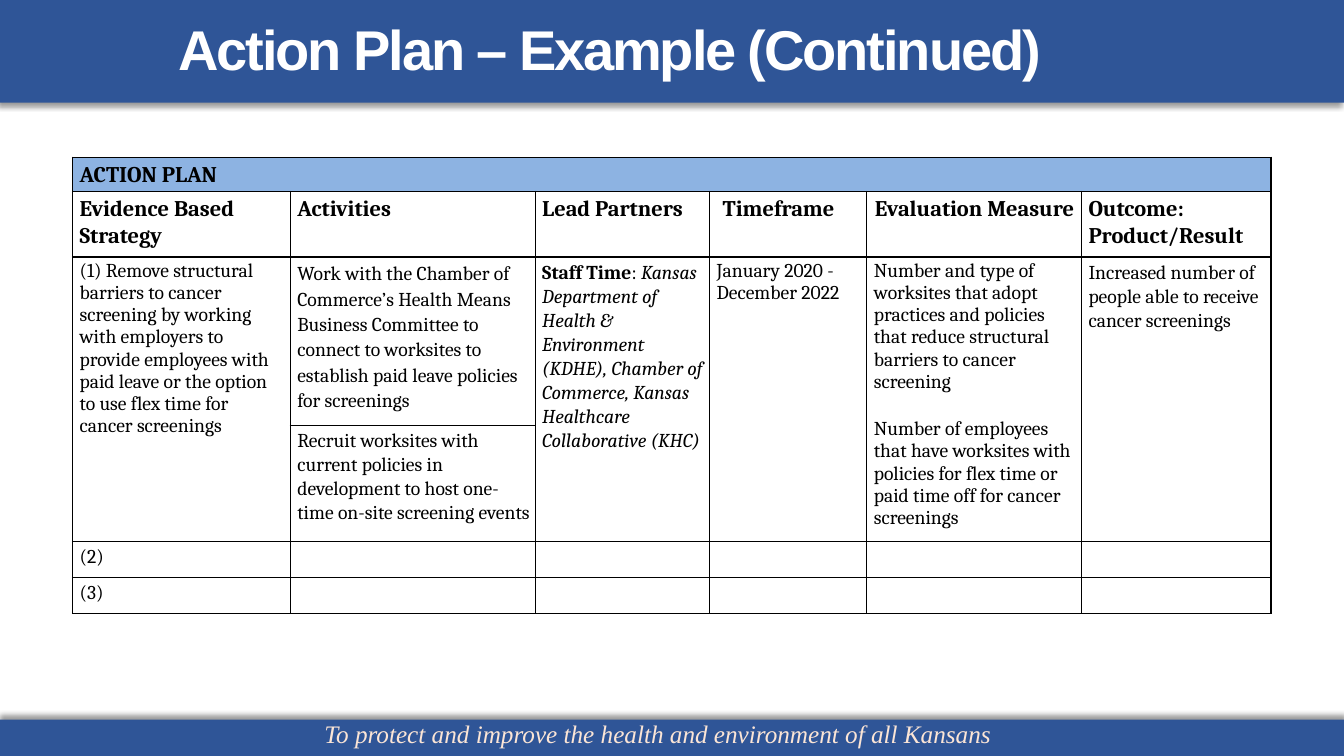
from lxml import etree
from pptx import Presentation
from pptx.dml.color import RGBColor
from pptx.enum.shapes import MSO_SHAPE
from pptx.enum.text import MSO_ANCHOR, MSO_AUTO_SIZE, PP_ALIGN
from pptx.oxml.ns import qn
from pptx.util import Inches, Pt

RECTANGLE = MSO_SHAPE.RECTANGLE
MIDDLE = MSO_ANCHOR.MIDDLE
NO_AUTOSIZE = MSO_AUTO_SIZE.NONE
LEFT = PP_ALIGN.LEFT

BLUE = RGBColor(0x2F, 0x55, 0x97)
LIGHT_BLUE = RGBColor(0x8D, 0xB3, 0xE2)
PEACH = RGBColor(0xFB, 0xE5, 0xD6)
WHITE = RGBColor(0xFF, 0xFF, 0xFF)
BLACK = RGBColor(0, 0, 0)

GRID_COLUMNS, GRID_ROWS = 160, 90
TITLE_FONT = {"name": "Arial", "size": Pt(40), "bold": True}
FOOTER_FONT = {"name": "Times New Roman", "size": Pt(18), "italic": True}
HEADING_FONT = {"name": "Cambria", "size": Pt(16), "bold": True}
BODY_FONT = {"name": "Cambria", "size": Pt(14), "bold": False}
CELL_MARGINS = {
    "margin_left": Inches(0.07),
    "margin_top": Inches(0.03),
    "margin_right": Inches(0.05),
    "margin_bottom": 0,
}
TITLE_MARGINS = dict.fromkeys(CELL_MARGINS, Inches(0.25))


def apply(target, values):
    for name, value in values.items():
        setattr(target, name, value)


class SlideBuilder:
    def __init__(self, presentation, layout):
        self.width = presentation.slide_width
        self.height = presentation.slide_height
        self.slide = presentation.slides.add_slide(layout)
        self.shapes = self.slide.shapes

    def across(self, columns):
        return round(self.width * columns / GRID_COLUMNS)

    def down(self, rows):
        return round(self.height * rows / GRID_ROWS)

    def box(self, left, top, width, height):
        return self.across(left), self.down(top), self.across(width), self.down(height)

    def fill_text(self, frame, paragraphs, font, color):
        for index, (runs, layout) in enumerate(paragraphs):
            paragraph = frame.add_paragraph() if index else frame.paragraphs[0]
            apply(paragraph, layout)
            for text, changes in runs:
                run = paragraph.add_run()
                run.text = text
                apply(run.font, {**font, **changes})
                run.font.color.rgb = color

    def bar(self, place, direction):
        shape = self.shapes.add_shape(RECTANGLE, *self.box(*place))
        shape.fill.solid()
        shape.fill.fore_color.rgb = BLUE
        shape.line.fill.background()
        shape.shadow.inherit = False
        effects = shape._element.spPr.find(qn("a:effectLst"))
        shadow = etree.SubElement(
            effects, qn("a:outerShdw"), blurRad=str(Pt(4)), dist=str(Pt(3)),
            dir=str(direction * 60000), algn="ctr", rotWithShape="0")
        color = etree.SubElement(shadow, qn("a:srgbClr"), val=str(BLACK))
        etree.SubElement(color, qn("a:alpha"), val="40000")

    def title(self, place, text):
        shape = self.shapes.title
        apply(shape, dict(zip(("left", "top", "width", "height"), self.box(*place))))
        frame = shape.text_frame
        apply(frame, {**TITLE_MARGINS, "vertical_anchor": MIDDLE,
                      "auto_size": NO_AUTOSIZE, "word_wrap": True})
        layout = {"alignment": LEFT, "line_spacing": 0.85}
        self.fill_text(frame, [([(text, {})], layout)], TITLE_FONT, WHITE)
        frame.paragraphs[0].runs[0]._r.get_or_add_rPr().set("spc", "-150")
        self.shapes._spTree.append(shape._element)

    def footer(self, place, text):
        frame = self.shapes.add_textbox(*self.box(*place)).text_frame
        frame.word_wrap = True
        self.fill_text(frame, [([(text, {})], {})], FOOTER_FONT, PEACH)

    def style_cell(self, cell, color):
        apply(cell, CELL_MARGINS)
        properties = cell._tc.get_or_add_tcPr()
        for side in ("a:lnL", "a:lnR", "a:lnT", "a:lnB"):
            line = etree.SubElement(properties, qn(side), w=str(Pt(1)))
            fill = etree.SubElement(line, qn("a:solidFill"))
            etree.SubElement(fill, qn("a:srgbClr"), val=str(BLACK))
        cell.fill.solid()
        cell.fill.fore_color.rgb = color

    def table(self, left, top, widths, heights, contents, merges, indents):
        place = self.box(left, top, sum(widths), sum(heights))
        table = self.shapes.add_table(len(heights), len(widths), *place).table
        apply(table, {"first_row": False, "horz_banding": False})
        for column, width in zip(table.columns, widths):
            column.width = self.across(width)
        for index, height in enumerate(heights):
            table.rows[index].height = self.down(height)
            for column in range(len(widths)):
                self.style_cell(table.cell(index, column), WHITE if index else LIGHT_BLUE)
        for start, end in merges:
            table.cell(*start).merge(table.cell(*end))
        for position, paragraphs in contents.items():
            font = HEADING_FONT if position[0] < 2 else BODY_FONT
            self.fill_text(table.cell(*position).text_frame, paragraphs, font, BLACK)
        for position, margin in indents.items():
            table.cell(*position).margin_left = Inches(margin)


def cell_text(text, spacing=1.07, **layout):
    return [(text, {})], {"line_spacing": spacing, **layout}


HEADINGS = ["Evidence Based Strategy", "Activities", "Lead Partners", "Timeframe",
            "Evaluation Measure", "Outcome: Product/Result"]
PARTNERS = [
    ("Staff Time", {"bold": True}),
    (": ", {}),
    ("Kansas Department of Health & Environment (KDHE), Chamber of Commerce, "
     "Kansas Healthcare Collaborative (KHC)", {"italic": True}),
]
CONTENTS = {
    (0, 0): [cell_text("ACTION PLAN")],
    **{(1, column): [cell_text(heading)] for column, heading in enumerate(HEADINGS)},
    (2, 0): [cell_text("(1) Remove structural barriers to cancer screening by working with "
                       "employers to provide employees with paid leave or the option to use "
                       "flex time for cancer screenings", 0.98)],
    (2, 1): [cell_text("Work with the Chamber of Commerce’s Health Means Business Committee to "
                       "connect to worksites to establish paid leave policies for screenings",
                       1.13)],
    (2, 2): [(PARTNERS, {"line_spacing": 1.07})],
    (2, 3): [cell_text("January 2020 - December 2022", 0.99)],
    (2, 4): [cell_text("Number and type of worksites that adopt practices and policies that "
                       "reduce structural barriers to cancer screening", 0.98),
             cell_text("Number of employees that have worksites with policies for flex time or "
                       "paid time off for cancer screenings", 0.99, space_before=Pt(18))],
    (2, 5): [cell_text("Increased number of people able to receive cancer screenings")],
    (3, 1): [cell_text("Recruit worksites with current policies in development to host "
                       "one-time on-site screening events")],
    (4, 0): [cell_text("(2)")],
    (5, 0): [cell_text("(3)")],
}
COLUMN_WIDTHS = [25.92, 29.16, 20.76, 18.72, 25.56, 22.56]
ROW_HEIGHTS = [4.08, 7.8, 20.04, 13.8, 4.32, 4.32]
MERGES = [((0, 0), (0, 5))] + [((2, column), (3, column)) for column in (0, 2, 3, 4, 5)]
INDENTS = {(1, 3): 0.13, (1, 4): 0.08}


def main():
    presentation = Presentation()
    presentation.slide_width = Inches(13.33)
    presentation.slide_height = Inches(7.5)
    builder = SlideBuilder(presentation, presentation.slide_layouts[5])
    builder.bar((0, -0.12, 160, 12.36), 135)
    builder.bar((0, 85.68, 160, 4.44), 270)
    builder.footer((37.44, 84.96, 84.84, 4.8),
                   "To protect and improve the health and environment of all Kansans")
    builder.title((18.24, 2.76, 128.04, 7.2), "Action Plan – Example (Continued)")
    builder.table(8.64, 18.72, COLUMN_WIDTHS, ROW_HEIGHTS, CONTENTS, MERGES, INDENTS)
    presentation.save("out.pptx")


if __name__ == "__main__":
    main()
